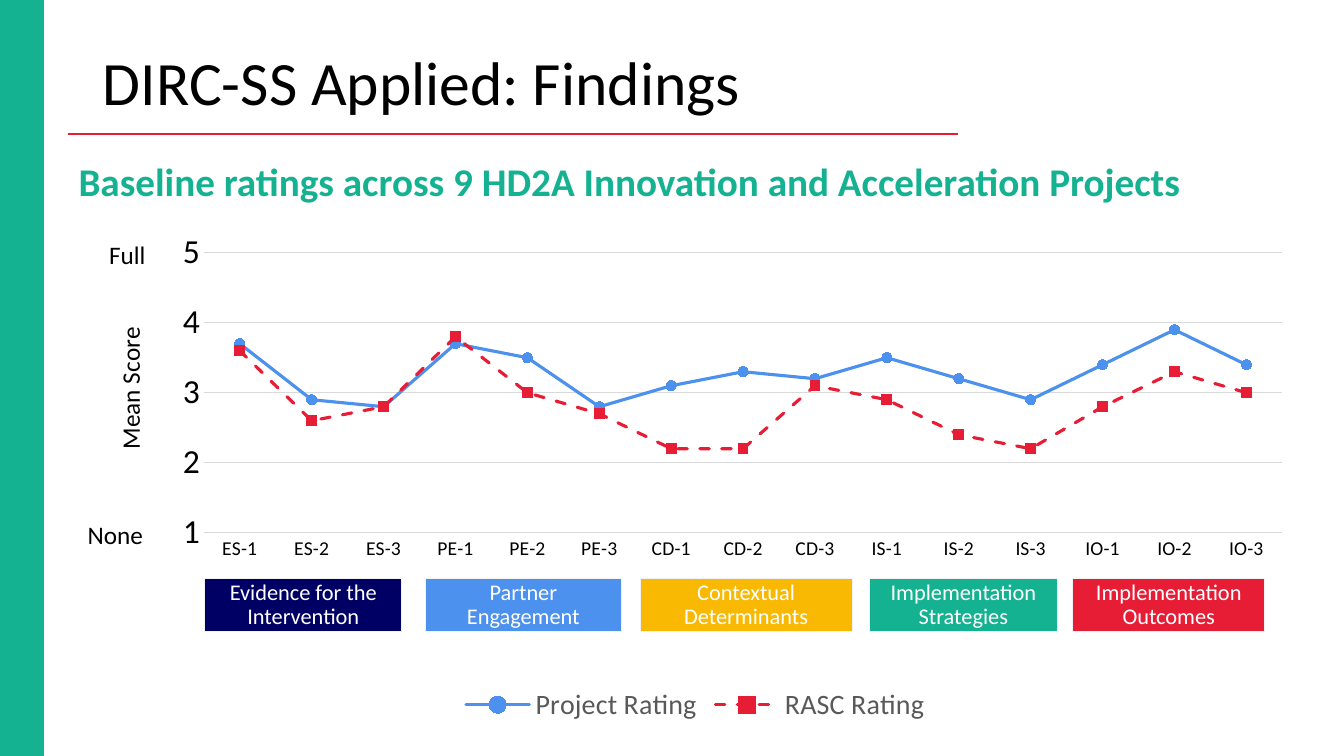
"""Build the slide on baseline ratings of the DIRC-SS findings."""
from dataclasses import dataclass
from typing import Any

from lxml.etree import SubElement
from pptx import Presentation
from pptx.chart.chart import Chart
from pptx.chart.data import CategoryChartData
from pptx.dml.color import RGBColor
from pptx.enum.chart import XL_CHART_TYPE, XL_LEGEND_POSITION, XL_MARKER_STYLE, XL_TICK_MARK
from pptx.enum.dml import MSO_LINE
from pptx.enum.shapes import MSO_CONNECTOR, MSO_SHAPE
from pptx.enum.text import MSO_ANCHOR, PP_ALIGN
from pptx.oxml import parse_xml
from pptx.oxml.ns import nsdecls, qn
from pptx.shapes.autoshape import Shape
from pptx.slide import Slide
from pptx.util import Cm, Pt

FONT = "Calibri"
GREEN, RED, BLUE, GRID = "15B292", "E71D36", "4B91ED", "D9D9D9"


@dataclass(frozen=True)
class Box:
    left: float
    top: float
    width: float
    height: float

    def lengths(self) -> tuple[Cm, Cm, Cm, Cm]:
        """Return the four edges as lengths."""
        return Cm(self.left), Cm(self.top), Cm(self.width), Cm(self.height)


@dataclass(frozen=True)
class Domain:
    code: str
    name: str
    left: float
    width: float
    color: str


@dataclass(frozen=True)
class Rating:
    name: str
    scores: tuple[float, ...]
    color: str
    marker: XL_MARKER_STYLE
    dash: MSO_LINE


@dataclass(frozen=True)
class Label:
    text: str
    box: Box
    style: dict[str, Any]


DOMAINS = (
    Domain("ES", "Evidence for the Intervention", 5.16, 4.97, "000064"),
    Domain("PE", "Partner Engagement", 10.72, 4.94, BLUE),
    Domain("CD", "Contextual Determinants", 16.13, 5.35, "F9B801"),
    Domain("IS", "Implementation Strategies", 21.92, 4.72, GREEN),
    Domain("IO", "Implementation Outcomes", 27.03, 4.85, RED),
)
RATINGS = (
    Rating("Project Rating",
           (3.7, 2.9, 2.8, 3.7, 3.5, 2.8, 3.1, 3.3, 3.2, 3.5, 3.2, 2.9, 3.4, 3.9, 3.4),
           BLUE, XL_MARKER_STYLE.CIRCLE, MSO_LINE.SOLID),
    Rating("RASC Rating",
           (3.6, 2.6, 2.8, 3.8, 3, 2.7, 2.2, 2.2, 3.1, 2.9, 2.4, 2.2, 2.8, 3.3, 3),
           RED, XL_MARKER_STYLE.SQUARE, MSO_LINE.DASH),
)
LABELS = (
    Label("DIRC-SS Applied: Findings", Box(2.34, 1.06, 29.21, 2.18),
          {"size": 44, "anchor": MSO_ANCHOR.MIDDLE, "spacing": 0.9}),
    Label("Baseline ratings across 9 HD2A Innovation and Acceleration Projects",
          Box(1.73, 3.84, 31.22, 1.45), {"size": 28, "color": GREEN, "bold": True}),
    Label("None", Box(1.96, 12.95, 1.98, 1.02), {"size": 18}),
    Label("Full", Box(2.5, 5.9, 1.68, 1.02), {"size": 18}),
)


def rgb(color: str) -> RGBColor:
    """Turn a hex string into a colour."""
    return RGBColor.from_string(color)


def set_font(font: Any, size: float, color: str = "000000", bold: bool = False) -> None:
    """Give a font its face, size, colour and weight."""
    font.name, font.size, font.bold = FONT, Pt(size), bold
    font.color.rgb = rgb(color)


def write(frame: Any, text: str, *, size: float, color: str = "000000", bold: bool = False,
          align: PP_ALIGN = PP_ALIGN.LEFT, anchor: MSO_ANCHOR = MSO_ANCHOR.TOP,
          spacing: float = 1.0) -> None:
    """Put formatted text into a text frame."""
    frame.word_wrap, frame.vertical_anchor = True, anchor
    paragraph = frame.paragraphs[0]
    paragraph.alignment, paragraph.line_spacing = align, spacing
    run = paragraph.add_run()
    run.text = text
    set_font(run.font, size, color, bold)


def add_block(slide: Slide, box: Box, fill: str, outline: str, weight: float) -> Shape:
    """Draw a flat rectangle."""
    block = slide.shapes.add_shape(MSO_SHAPE.RECTANGLE, *box.lengths())
    block.shadow.inherit = False
    block.fill.solid()
    block.fill.fore_color.rgb = rgb(fill)
    block.line.color.rgb = rgb(outline)
    block.line.width = Pt(weight)
    return block


def add_rule(slide: Slide, left: float, right: float, top: float) -> None:
    """Draw the red rule under the title."""
    rule = slide.shapes.add_connector(MSO_CONNECTOR.STRAIGHT, Cm(left), Cm(top), Cm(right), Cm(top))
    rule.line.color.rgb = rgb(RED)
    rule.line.width = Pt(1.5)
    SubElement(rule._element.spPr, qn("a:effectLst"))


def add_domain(slide: Slide, domain: Domain) -> None:
    """Draw the tag of one domain below the axis."""
    tag = add_block(slide, Box(domain.left, 14.58, domain.width, 1.33), domain.color, "F2F2F2", 0.75)
    frame = tag.text_frame
    frame.margin_left = frame.margin_right = frame.margin_top = frame.margin_bottom = Cm(0.15)
    write(frame, domain.name, size=16, color="FFFFFF", align=PP_ALIGN.CENTER,
          anchor=MSO_ANCHOR.MIDDLE, spacing=0.9)


def set_layout(parent: Any, index: int, target: str = "", **fractions: float) -> None:
    """Fix the place of a chart part as fractions of the chart."""
    for old in parent.findall(qn("c:layout")):
        parent.remove(old)
    parts = f'<c:layoutTarget val="{target}"/>' if target else ""
    parts += "".join(f'<c:{key}Mode val="edge"/>' for key in "xy")
    parts += "".join(f'<c:{key} val="{value}"/>' for key, value in fractions.items())
    parent.insert(index, parse_xml(
        f'<c:layout {nsdecls("c")}><c:manualLayout>{parts}</c:manualLayout></c:layout>'))


def style_axes(chart: Chart) -> None:
    """Format both axes, the gridlines and the score title."""
    items, scores = chart.category_axis, chart.value_axis
    for axis, size in ((items, 14), (scores, 24)):
        axis.major_tick_mark = axis.minor_tick_mark = XL_TICK_MARK.NONE
        set_font(axis.tick_labels.font, size)
    scores.minimum_scale, scores.maximum_scale, scores.major_unit = 1, 5, 1
    scores.format.line.fill.background()
    scores.tick_labels.number_format = "General"
    scores.tick_labels.number_format_is_linked = False
    for line in (items.format.line, scores.major_gridlines.format.line):
        line.color.rgb = rgb(GRID)
        line.width = Pt(0.75)
    title = scores.axis_title
    frame = title.text_frame
    write(frame, "Mean Score", size=18)
    frame._txBody.bodyPr.set("rot", "-5400000")
    frame._txBody.bodyPr.set("vert", "horz")
    set_layout(title._element, 1, x=0.01, y=0.19)


def add_ratings(slide: Slide, box: Box) -> None:
    """Draw the line chart of both ratings."""
    data = CategoryChartData(number_format="General")
    data.categories = [f"{domain.code}-{item}" for domain in DOMAINS for item in range(1, 4)]
    for rating in RATINGS:
        data.add_series(rating.name, rating.scores)
    chart = slide.shapes.add_chart(XL_CHART_TYPE.LINE_MARKERS, *box.lengths(), data).chart
    set_font(chart.font, 10)
    chart.has_title = False
    chart.has_legend = True
    chart.legend.position = XL_LEGEND_POSITION.BOTTOM
    chart.legend.include_in_layout = False
    set_font(chart.legend.font, 20, "595959")
    style_axes(chart)
    plot = chart.plots[0]
    plot.vary_by_categories = False
    for series, rating in zip(plot.series, RATINGS):
        series.smooth = False
        series.format.line.color.rgb = rgb(rating.color)
        series.format.line.width = Pt(2.25)
        series.format.line.dash_style = rating.dash
        series.format.line._get_or_add_ln().set("cap", "rnd")
        series.marker.style, series.marker.size = rating.marker, 7
        series.marker.format.fill.solid()
        series.marker.format.fill.fore_color.rgb = rgb(rating.color)
        series.marker.format.line.color.rgb = rgb(rating.color)
    set_layout(chart._chartSpace.chart.plotArea, 0, "inner", x=0.09, y=0.05, w=0.9, h=0.56)


def main() -> None:
    """Assemble and save the slide."""
    deck = Presentation()
    deck.slide_width, deck.slide_height = Cm(33.87), Cm(19.05)
    slide = deck.slides.add_slide(deck.slide_layouts[6])
    add_block(slide, Box(0, 0, 1.09, 19.05), GREEN, GREEN, 1)
    add_rule(slide, 1.72, 24.14, 3.38)
    add_ratings(slide, Box(2.42, 5.74, 30.2, 12.6))
    for domain in DOMAINS:
        add_domain(slide, domain)
    for label in LABELS:
        write(slide.shapes.add_textbox(*label.box.lengths()).text_frame, label.text, **label.style)
    deck.save("out.pptx")


if __name__ == "__main__":
    main()
